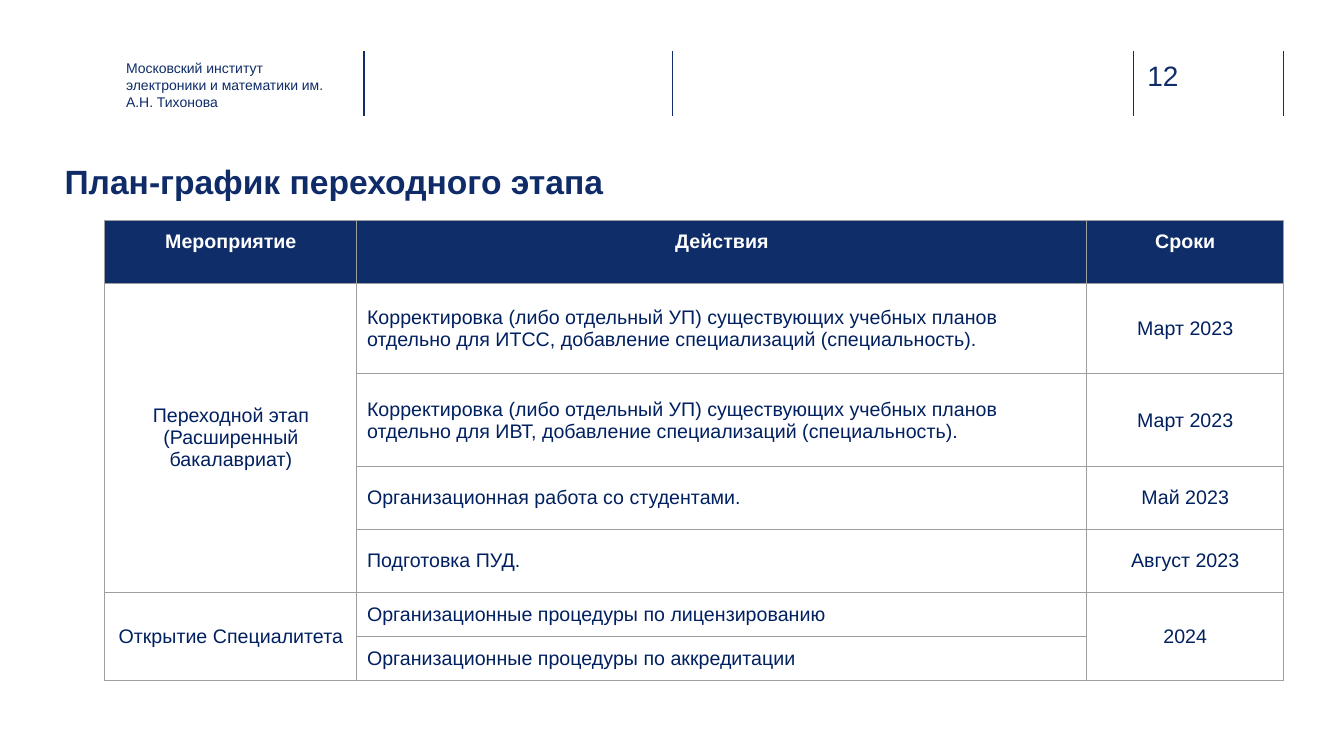
"""Build the slide with the schedule of the transitional stage."""
from lxml.etree import SubElement
from pptx import Presentation
from pptx.dml.color import RGBColor
from pptx.enum.shapes import MSO_CONNECTOR as Connector
from pptx.enum.text import MSO_ANCHOR as Anchor, PP_ALIGN as Align
from pptx.oxml.ns import qn
from pptx.util import Inches, Pt

COLORS = {"navy": "102D69", "heading": "0F2C68", "header": "0E2D69", "text": "002060",
          "white": "FFFFFF", "grid": "9E9E9E", "number": "000000"}
FONT = "Arial"
TITLE = "План-график переходного этапа"
INSTITUTE = "Московский институт электроники и математики им. А.Н. Тихонова"
PAGE_NUMBER = "12"
HEADERS = ["Мероприятие", "Действия", "Сроки"]
STAGES = [
    (["Переходной этап", "(Расширенный бакалавриат)"], [
        ("Корректировка (либо отдельный УП) существующих учебных планов отдельно для ИТСС, "
         "добавление специализаций (специальность).", "Март 2023"),
        ("Корректировка (либо отдельный УП) существующих учебных планов отдельно для ИВТ, "
         "добавление специализаций (специальность).", "Март 2023"),
        ("Организационная работа со студентами.", "Май 2023"),
        ("Подготовка ПУД.", "Август 2023"),
    ]),
    (["Открытие Специалитета"], [
        ("Организационные процедуры по лицензированию", "2024"),
        ("Организационные процедуры по аккредитации", None),
    ]),
]
COLUMN_WIDTHS = [2.5, 7.24, 1.95]
ROW_HEIGHTS = [0.62, 0.9, 0.92, 0.62, 0.63, 0.42, 0.42]
TABLE_LEFT, TABLE_TOP = 1.04, 2.19
RULE_XS, RULE_TOP, RULE_BOTTOM = [3.61, 6.67, 11.24, 12.73], 0.51, 1.15
CELL_MARGIN = 0.1
NUMBER_INDENT, DATE_INDENT = 0.2, 0.38
PLAIN_TABLE_STYLE = "{2D5ABB26-0587-4C30-8999-92F81FD0307C}"
SECTION_LAYOUT = 2


def rgb(name):
    return RGBColor.from_string(COLORS[name])


def set_margins(target, size):
    for side in ("left", "top", "right", "bottom"):
        setattr(target, f"margin_{side}", Inches(size))


def style_paragraph(paragraph, color, size, bold=False, align=Align.LEFT):
    paragraph.alignment = align
    paragraph.space_before = Pt(0)
    for run in paragraph.runs:
        for name, value in {"name": FONT, "size": Pt(size), "bold": bold}.items():
            setattr(run.font, name, value)
        run.font.color.rgb = rgb(color)
        run.font._element.set("cap", "none")


def fill_box(shape, text, box, color, size, bold=False, anchor=Anchor.TOP):
    for name, value in zip(("left", "top", "width", "height"), box):
        setattr(shape, name, Inches(value))
    frame = shape.text_frame
    frame.text = text
    frame.word_wrap = True
    frame.vertical_anchor = anchor
    set_margins(frame, 0)
    style_paragraph(frame.paragraphs[0], color, size, bold)


def add_rule(slide, x):
    rule = slide.shapes.add_connector(
        Connector.STRAIGHT, Inches(x), Inches(RULE_TOP), Inches(x), Inches(RULE_BOTTOM))
    rule.line.color.rgb = rgb("navy")
    rule.line.width = Pt(1)
    SubElement(rule._element.spPr, qn("a:effectLst"))


def add_solid(parent, tag, color):
    holder = SubElement(parent, qn(tag))
    return SubElement(holder, qn("a:srgbClr"), val=COLORS[color])


def hang(paragraph, indent):
    properties = paragraph._p.get_or_add_pPr()
    properties.set("marL", str(Inches(indent)))
    properties.set("indent", str(-Inches(indent)))
    return properties


def add_number(paragraph, number):
    properties = hang(paragraph, NUMBER_INDENT)
    add_solid(properties, "a:buClr", "number")
    SubElement(properties, qn("a:buFont"), typeface=FONT)
    SubElement(properties, qn("a:buAutoNum"), type="arabicPeriod", startAt=str(number))


def format_cell(cell, is_header):
    set_margins(cell, CELL_MARGIN)
    cell.vertical_anchor = Anchor.TOP if is_header else Anchor.MIDDLE
    properties = cell._tc.get_or_add_tcPr()
    for side in "LRTB":
        border = SubElement(properties, qn(f"a:ln{side}"), w=str(Pt(0.75)))
        add_solid(border, "a:solidFill", "grid")
    if is_header:
        cell.fill.solid()
        cell.fill.fore_color.rgb = rgb("header")
    else:
        cell.fill.background()


def write_cell(cell, lines, align=Align.CENTER, is_header=False):
    cell.text = "\n".join(lines)
    for paragraph in cell.text_frame.paragraphs:
        style_paragraph(paragraph, "white" if is_header else "text", 14, is_header, align)


def add_schedule(slide):
    frame = slide.shapes.add_table(
        len(ROW_HEIGHTS), len(COLUMN_WIDTHS), Inches(TABLE_LEFT), Inches(TABLE_TOP),
        Inches(sum(COLUMN_WIDTHS)), Inches(sum(ROW_HEIGHTS)))
    table = frame.table
    table.first_row = table.horz_banding = False
    table._tbl.tblPr.find(qn("a:tableStyleId")).text = PLAIN_TABLE_STYLE
    for column, width in zip(table.columns, COLUMN_WIDTHS):
        column.width = Inches(width)
    for index, (row, height) in enumerate(zip(table.rows, ROW_HEIGHTS)):
        row.height = Inches(height)
        for cell in row.cells:
            format_cell(cell, index == 0)
    for column, header in enumerate(HEADERS):
        write_cell(table.cell(0, column), [header], is_header=True)

    first = 1
    for stage, actions in STAGES:
        last = first + len(actions) - 1
        table.cell(first, 0).merge(table.cell(last, 0))
        write_cell(table.cell(first, 0), stage)
        for number, (action, date) in enumerate(actions, 1):
            row = first + number - 1
            action_cell, date_cell = table.cell(row, 1), table.cell(row, 2)
            add_number(action_cell.text_frame.paragraphs[0], number)
            write_cell(action_cell, [action], Align.LEFT)
            if date is None:
                table.cell(row - 1, 2).merge(date_cell)
            else:
                write_cell(date_cell, [date])
                hang(date_cell.text_frame.paragraphs[0], DATE_INDENT)
        first = last + 1


def main():
    presentation = Presentation()
    presentation.slide_width, presentation.slide_height = Inches(13.33), Inches(7.5)
    slide = presentation.slides.add_slide(presentation.slide_layouts[SECTION_LAYOUT])
    for x in RULE_XS:
        add_rule(slide, x)
    page_box = slide.shapes.add_textbox(0, 0, 0, 0)
    fill_box(page_box, PAGE_NUMBER, (11.38, 0.58, 0.73, 0.34), "navy", 20)
    fill_box(slide.shapes.title, TITLE, (0.64, 1.58, 7.6, 0.44), "heading", 24, True,
             Anchor.MIDDLE)
    fill_box(slide.placeholders[1], INSTITUTE, (1.25, 0.59, 2.08, 0.45), "heading", 10)
    add_schedule(slide)
    presentation.save("out.pptx")


if __name__ == "__main__":
    main()
